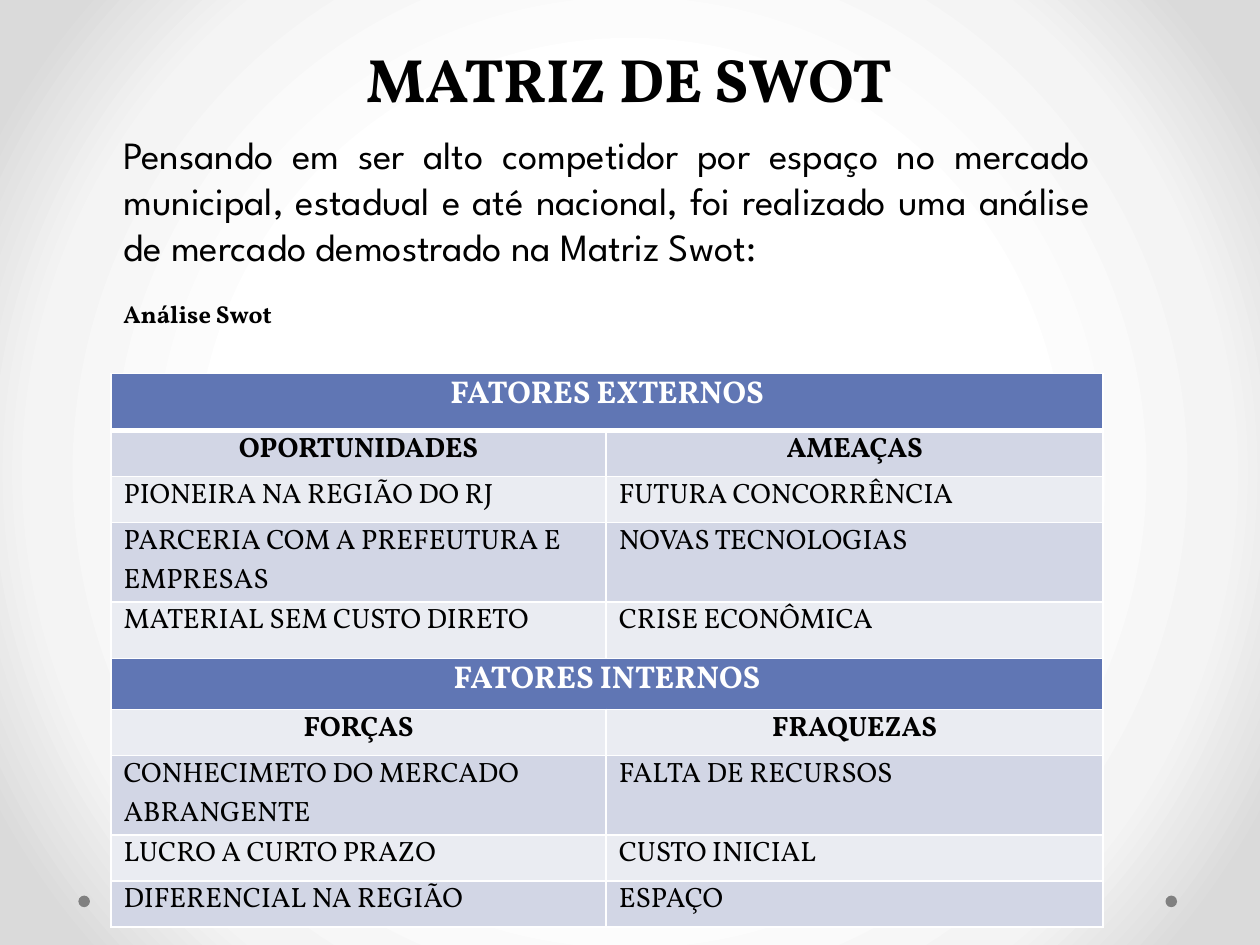
import pptx
import pptx.util
import pptx.dml.color
import pptx.enum.shapes
import pptx.enum.text
import pptx.oxml
import pptx.oxml.ns

Pt = pptx.util.Pt
ALIGN = pptx.enum.text.PP_ALIGN
ANCHOR = pptx.enum.text.MSO_ANCHOR
COLORS = {
    "text": "000000", "white": "FFFFFF", "dot": "808080",
    "header": "6076B4", "dark": "D2D6E5", "light": "EAECF2",
}
GLOW = [(50, "FFFFFF"), (76, "F4F4F4"), (92, "DADADA")]
SERIF, SANS = "Vollkorn", "League Spartan"


def rgb(name):
    return pptx.dml.color.RGBColor.from_string(COLORS[name])


def set_all(target, values):
    for name, value in values.items():
        setattr(target, name, value)


class SlideBuilder:
    def __init__(self, page):
        self.page = page

    def background(self, stops):
        fill = self.page.background.fill
        fill.gradient()
        gradient = self.page.element.find(".//" + pptx.oxml.ns.qn("a:gradFill"))
        for child in list(gradient):
            gradient.remove(child)
        space = pptx.oxml.ns.nsdecls("a")
        marks = "".join(
            f'<a:gs pos="{place * 1000}"><a:srgbClr val="{color}"/></a:gs>'
            for place, color in stops)
        gradient.append(pptx.oxml.parse_xml(f"<a:gsLst {space}>{marks}</a:gsLst>"))
        gradient.append(pptx.oxml.parse_xml(
            f'<a:path {space} path="circle">'
            '<a:fillToRect l="50000" t="50000" r="50000" b="50000"/></a:path>'))

    def dot(self, left, top, size):
        shape = self.page.shapes.add_shape(
            pptx.enum.shapes.MSO_SHAPE.OVAL, Pt(left), Pt(top), Pt(size), Pt(size))
        shape.shadow.inherit = False
        shape.fill.solid()
        shape.fill.fore_color.rgb = rgb("dot")
        shape.line.fill.background()

    def fill_para(self, para, text, size, font=SERIF, bold=False, color="text", **layout):
        set_all(para, layout)
        span = para.add_run()
        span.text = text
        set_all(span.font, {"name": font, "size": Pt(size), "bold": bold})
        span.font.color.rgb = rgb(color)

    def text(self, left, top, width, height, lines, anchor=ANCHOR.TOP):
        box = self.page.shapes.add_textbox(Pt(left), Pt(top), Pt(width), Pt(height))
        frame = box.text_frame
        set_all(frame, {"word_wrap": True, "vertical_anchor": anchor})
        for index, line in enumerate(lines):
            para = frame.add_paragraph() if index else frame.paragraphs[0]
            self.fill_para(para, **line)

    def borders(self, cell, bottom):
        props = cell._tc.get_or_add_tcPr()
        widths = {"lnL": 1, "lnR": 1, "lnT": 1, "lnB": bottom}
        for index, (side, width) in enumerate(widths.items()):
            props.insert(index, pptx.oxml.parse_xml(
                f'<a:{side} {pptx.oxml.ns.nsdecls("a")} w="{Pt(width)}"><a:solidFill>'
                f'<a:srgbClr val="{COLORS["white"]}"/></a:solidFill></a:{side}>'))

    def table(self, left, top, widths, rows):
        height = sum(row[1] for row in rows)
        grid = self.page.shapes.add_table(
            len(rows), len(widths), Pt(left), Pt(top), Pt(sum(widths)), Pt(height)).table
        for column, width in zip(grid.columns, widths):
            column.width = Pt(width)
        for index, (kind, row_height, *texts) in enumerate(rows):
            grid.rows[index].height = Pt(row_height)
            band = "header" if kind == "header" else ("dark" if index % 2 else "light")
            if kind == "header":
                grid.cell(index, 0).merge(grid.cell(index, len(widths) - 1))
            for column in range(len(widths)):
                cell = grid.cell(index, column)
                set_all(cell, {"margin_left": Pt(7.2), "margin_right": Pt(7.2),
                               "margin_top": Pt(0), "margin_bottom": Pt(0)})
                cell.fill.solid()
                cell.fill.fore_color.rgb = rgb(band)
                self.borders(cell, 1 if index else 3)
                if column < len(texts):
                    self.fill_para(cell.text_frame.paragraphs[0], texts[column],
                                   **ROW_STYLES[kind])


ROW_STYLES = {
    "header": {"size": 18, "bold": True, "color": "white", "alignment": ALIGN.CENTER},
    "group": {"size": 16, "bold": True, "alignment": ALIGN.CENTER},
    "item": {"size": 16, "alignment": ALIGN.LEFT},
}
SWOT_ROWS = [
    ("header", 32.6, "FATORES EXTERNOS"),
    ("group", 26.3, "OPORTUNIDADES", "AMEAÇAS"),
    ("item", 26.3, "PIONEIRA NA REGIÃO DO RJ", "FUTURA CONCORRÊNCIA"),
    ("item", 45.5, "PARCERIA COM A PREFEUTURA E EMPRESAS", "NOVAS TECNOLOGIAS"),
    ("item", 32.3, "MATERIAL SEM CUSTO DIRETO", "CRISE ECONÔMICA"),
    ("header", 29, "FATORES INTERNOS"),
    ("group", 26.5, "FORÇAS", "FRAQUEZAS"),
    ("item", 45.3, "CONHECIMETO DO MERCADO ABRANGENTE", "FALTA DE RECURSOS"),
    ("item", 26.3, "LUCRO A CURTO PRAZO", "CUSTO INICIAL"),
    ("item", 26.3, "DIFERENCIAL NA REGIÃO", "ESPAÇO"),
]


def main():
    deck = pptx.Presentation()
    set_all(deck, {"slide_width": Pt(720), "slide_height": Pt(540)})
    builder = SlideBuilder(deck.slides.add_slide(deck.slide_layouts[6]))

    # Backdrop and corner dots
    builder.background(GLOW)
    for left in (666, 44.8):
        builder.dot(left, 511.8, 6.6)

    # Title
    builder.text(36, -2, 648, 71, [
        {"text": "MATRIZ DE SWOT", "size": 35, "bold": True,
         "alignment": ALIGN.CENTER, "line_spacing": Pt(58)},
    ], ANCHOR.BOTTOM)

    # Introduction and table caption
    builder.text(63.4, 71.3, 566.6, 147.6, [
        {"text": "Pensando em ser alto competidor por espaço no mercado municipal, "
                 "estadual e até nacional, foi realizado uma análise de mercado "
                 "demostrado na Matriz Swot:",
         "size": 22, "font": SANS, "alignment": ALIGN.JUSTIFY},
        {"text": "Análise Swot", "size": 14, "bold": True,
         "alignment": ALIGN.JUSTIFY, "space_before": Pt(17)},
    ])

    # SWOT table
    builder.table(63.4, 213.4, (283, 284), SWOT_ROWS)
    deck.save("out.pptx")


if __name__ == "__main__":
    main()
